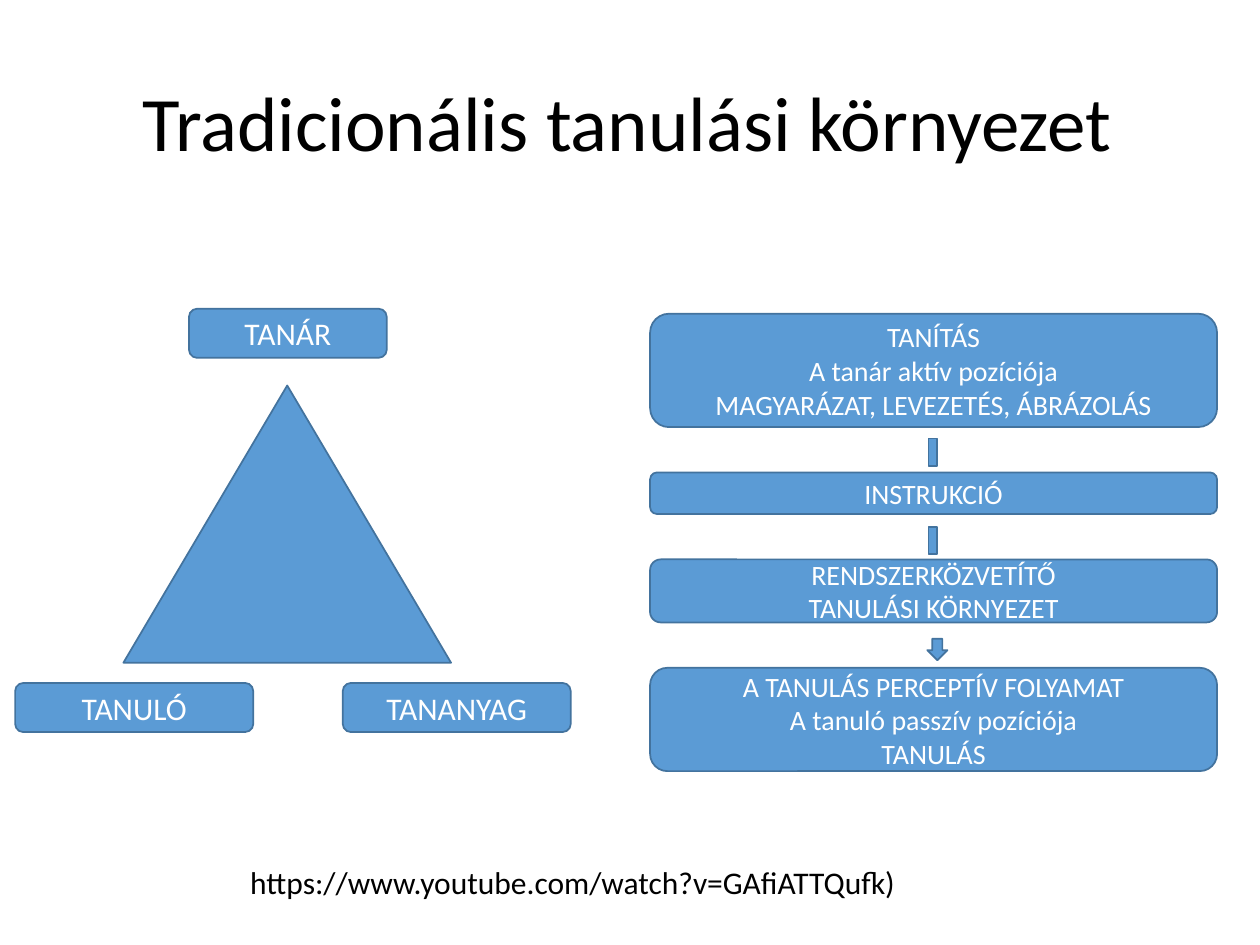
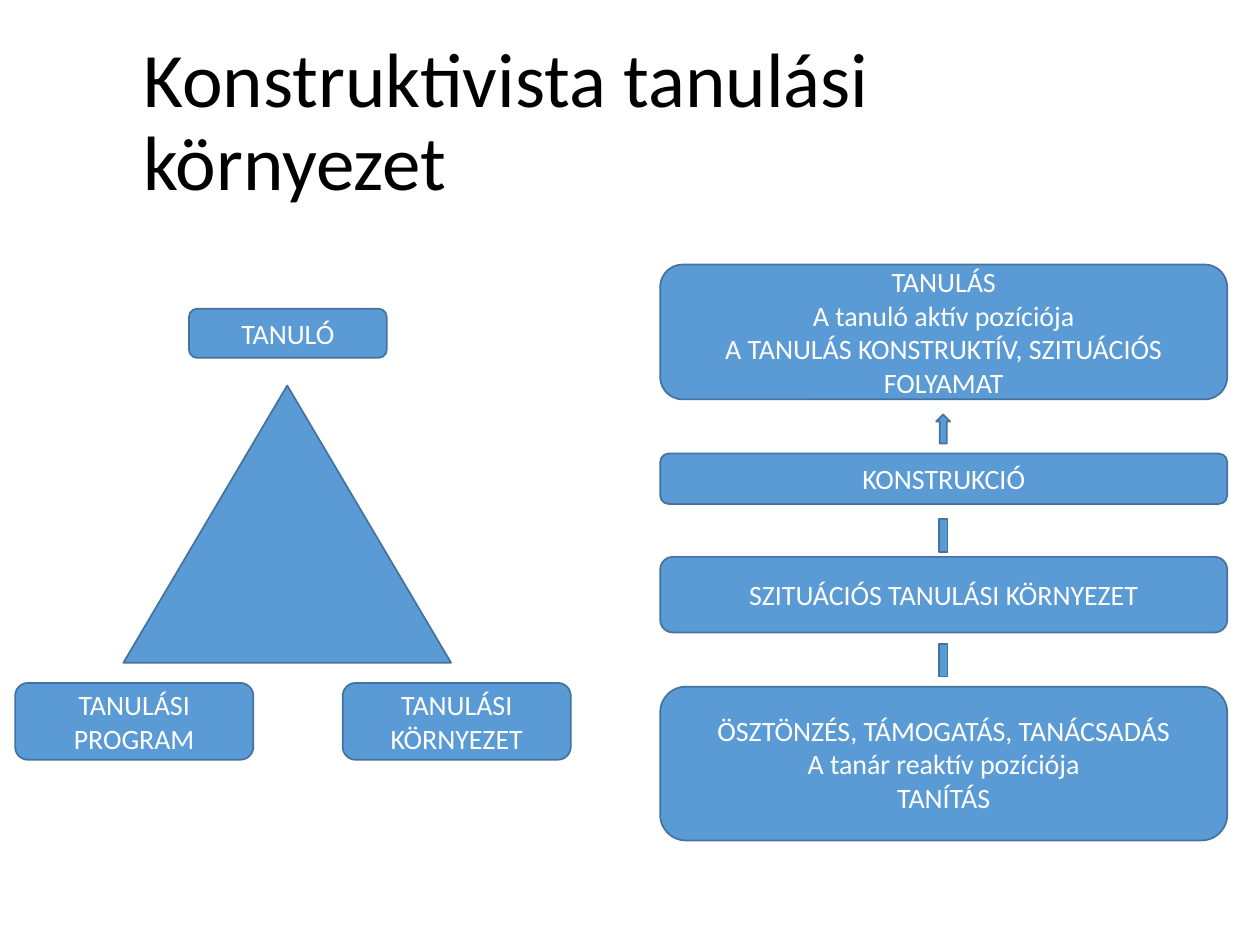
from dataclasses import dataclass

from pptx import Presentation
from pptx.dml.color import RGBColor as RGB
from pptx.enum.shapes import MSO_SHAPE as Kind
from pptx.enum.text import MSO_ANCHOR as Anchor, PP_ALIGN as Align
from pptx.util import Inches, Pt

FONT = "Calibri"
COLORS = {"fill": "5B9BD5", "edge": "43739E", "white": "FFFFFF", "black": "000000"}
PANEL_W = 4.5
BAR_W = 0.07


@dataclass
class Panel:
    """One full-width box in the right column."""
    top: float
    height: float
    text: str


@dataclass
class Link:
    """A bar or arrow between two panels."""
    left: float
    top: float
    width: float
    height: float
    kind: Kind = Kind.RECTANGLE
    turn: int = 0


@dataclass
class Topic:
    title: str
    title_at: tuple[float, float]
    corners: tuple[str, str, str]
    corner_size: int
    base_h: float
    panel_x: float
    panels: list[Panel]
    links: list[Link]
    url: str = ""


TOPICS = [
    Topic(
        "Tradicionális tanulási környezet", (0.5, 0.24),
        ("TANÁR", "TANULÓ", "TANANYAG"), 18, 0.39, 5.16,
        [Panel(2.49, 0.9, "TANÍTÁS\nA tanár aktív pozíciója\n"
                          "MAGYARÁZAT, LEVEZETÉS, ÁBRÁZOLÁS"),
         Panel(3.75, 0.33, "INSTRUKCIÓ"),
         Panel(4.44, 0.5, "RENDSZERKÖZVETÍTŐ\nTANULÁSI KÖRNYEZET"),
         Panel(5.3, 0.82, "A TANULÁS PERCEPTÍV FOLYAMAT\n"
                          "A tanuló passzív pozíciója\nTANULÁS")],
        [Link(7.37, 3.48, BAR_W, 0.22),
         Link(7.37, 4.18, BAR_W, 0.22),
         Link(7.36, 5.07, 0.16, 0.17, Kind.DOWN_ARROW)],
        "https://www.youtube.com/watch?v=GAfiATTQufk)",
    ),
    Topic(
        "Konstruktivista tanulási környezet", (0.51, 0.22),
        ("TANULÓ", "TANULÁSI PROGRAM", "TANULÁSI KÖRNYEZET"), 16, 0.61, 5.24,
        [Panel(2.1, 1.07, "TANULÁS\nA tanuló aktív pozíciója\n"
                          "A TANULÁS KONSTRUKTÍV, SZITUÁCIÓS FOLYAMAT"),
         Panel(3.6, 0.4, "KONSTRUKCIÓ"),
         Panel(4.42, 0.6, "SZITUÁCIÓS TANULÁSI KÖRNYEZET"),
         Panel(5.45, 1.22, "ÖSZTÖNZÉS, TÁMOGATÁS, TANÁCSADÁS\n"
                           "A tanár reaktív pozíciója\nTANÍTÁS")],
        [Link(7.45, 5.11, BAR_W, 0.26),
         Link(7.45, 4.12, BAR_W, 0.26),
         Link(7.43, 3.29, 0.11, 0.23, Kind.DOWN_ARROW, 180)],
    ),
]


def color(name: str) -> RGB:
    return RGB.from_string(COLORS[name])


def write(frame, text: str, size: int, ink: str, align: Align) -> None:
    frame.word_wrap = True
    frame.vertical_anchor = Anchor.MIDDLE
    frame.text = text
    for para in frame.paragraphs:
        para.alignment = align
        para.font.name = FONT
        para.font.size = Pt(size)
        para.font.color.rgb = color(ink)


def add_form(slide, kind: Kind, left: float, top: float, width: float, height: float,
             fill: str = "fill", edge: str = "edge"):
    form = slide.shapes.add_shape(
        kind, Inches(left), Inches(top), Inches(width), Inches(height))
    form.shadow.inherit = False
    form.fill.solid()
    form.fill.fore_color.rgb = color(fill)
    form.line.color.rgb = color(edge)
    form.line.width = Pt(1)
    return form


def add_box(slide, left: float, top: float, width: float, height: float,
            text: str, size: int) -> None:
    box = add_form(slide, Kind.ROUNDED_RECTANGLE, left, top, width, height)
    write(box.text_frame, text, size, "white", Align.CENTER)


def add_title(slide, topic: Topic) -> None:
    left, top = topic.title_at
    box = slide.shapes.add_textbox(Inches(left), Inches(top), Inches(9), Inches(1.53))
    frame = box.text_frame
    frame.margin_left = Inches(0.63)
    frame.margin_right = Inches(0.2)
    write(frame, topic.title, 44, "black", Align.LEFT)
    frame.paragraphs[0].line_spacing = 0.9


def add_triad(slide, topic: Topic) -> None:
    add_form(slide, Kind.ISOSCELES_TRIANGLE, 0.98, 3.06, 2.6, 2.2)
    spots = [(1.5, 2.45, 1.57, 0.39),
             (0.12, 5.42, 1.89, topic.base_h),
             (2.72, 5.42, 1.81, topic.base_h)]
    for spot, text in zip(spots, topic.corners):
        add_box(slide, *spot, text, topic.corner_size)


def add_flow(slide, topic: Topic) -> None:
    for panel in topic.panels:
        add_box(slide, topic.panel_x, panel.top, PANEL_W, panel.height, panel.text, 16)
    for link in topic.links:
        form = add_form(slide, link.kind, link.left, link.top, link.width, link.height)
        form.rotation = link.turn


def add_url(slide, url: str) -> None:
    band = add_form(slide, Kind.RECTANGLE, 1.33, 6.65, 6.43, 0.7, "white", "white")
    write(band.text_frame, url, 18, "black", Align.CENTER)


def main() -> None:
    deck = Presentation()
    deck.slide_width, deck.slide_height = Inches(10), Inches(7.5)
    for topic in TOPICS:
        slide = deck.slides.add_slide(deck.slide_layouts[6])
        add_title(slide, topic)
        add_triad(slide, topic)
        add_flow(slide, topic)
        if topic.url:
            add_url(slide, topic.url)
    deck.save("out.pptx")


if __name__ == "__main__":
    main()
